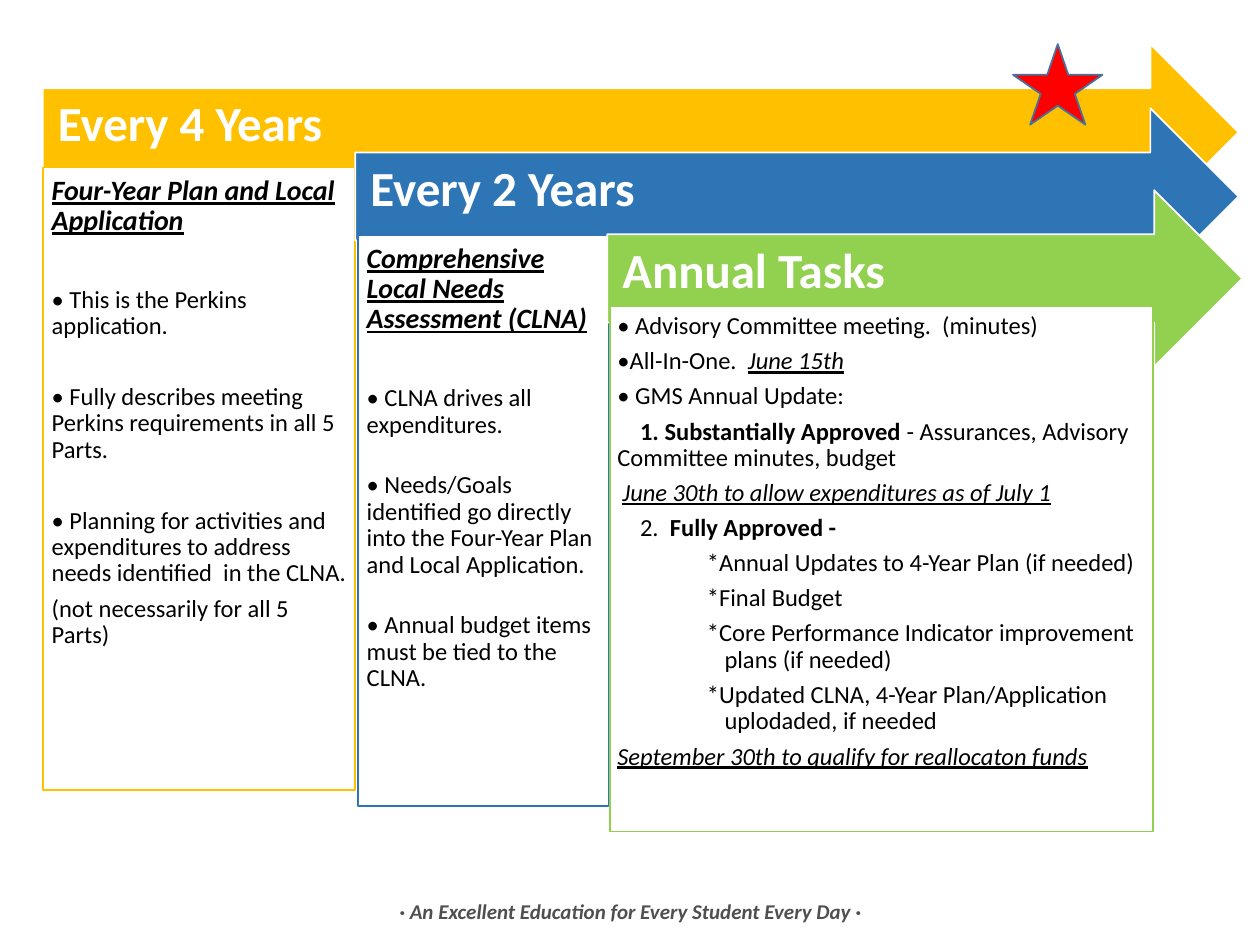
from dataclasses import dataclass

from pptx import Presentation
from pptx.dml.color import RGBColor
from pptx.enum.shapes import MSO_SHAPE
from pptx.enum.text import MSO_ANCHOR, PP_ALIGN
from pptx.util import Inches, Pt

ARROW, BOX, STAR = MSO_SHAPE.RIGHT_ARROW, MSO_SHAPE.RECTANGLE, MSO_SHAPE.STAR_5_POINT
TOP, MIDDLE, BOTTOM = MSO_ANCHOR.TOP, MSO_ANCHOR.MIDDLE, MSO_ANCHOR.BOTTOM
LEFT, CENTER = PP_ALIGN.LEFT, PP_ALIGN.CENTER

WHITE = RGBColor(0xFF, 0xFF, 0xFF)
BLACK = RGBColor(0x00, 0x00, 0x00)
GRAY = RGBColor(0x4F, 0x4F, 0x4F)
GOLD = RGBColor(0xFF, 0xC0, 0x00)
BLUE = RGBColor(0x2E, 0x75, 0xB6)
GREEN = RGBColor(0x92, 0xD0, 0x50)
RED = RGBColor(0xFF, 0x00, 0x00)
STAR_EDGE = RGBColor(0x43, 0x73, 0x9E)

FONT = "Calibri"
BOLD = {"bold": True}
DATE = {"italic": True, "underline": True}
HEADING = {"bold": True, "italic": True, "underline": True}
ARROW_HEIGHT = 1.4
ARROW_MARGINS = (0.12, 0.12, 0.28, 0.22)


@dataclass(frozen=True)
class Run:
    text: str
    style: dict


@dataclass(frozen=True)
class Line:
    """One paragraph: sizes and space in points, indents in inches."""
    runs: tuple[Run, ...]
    size: float = 14
    before: float = 0
    margin: float = 0
    indent: float = 0


@dataclass(frozen=True)
class Stage:
    title: str
    color: RGBColor
    arrow: tuple[float, float, float]  # left, top, width
    box: tuple[float, float, float, float]
    inset: float
    lines: tuple[Line, ...]


def plain(text: str, **layout: float) -> Line:
    return Line((Run(text, {}),), **layout)


def heading(text: str) -> Line:
    return Line((Run(text, HEADING),), size=16)


def subtask(text: str) -> Line:
    return plain(text, margin=0.85, indent=-0.14)


STAGES = (
    Stage("Every 4 Years", GOLD, (0.34, 0.35, 9.49), (0.34, 1.33, 2.48, 4.94), 0.07, (
        heading("Four-Year Plan and Local Application"),
        plain("• This is the Perkins application.", before=23.2),
        plain("• Fully describes meeting Perkins requirements in all 5 Parts.", before=20.3),
        plain("• Planning for activities and expenditures to address needs "
              "identified  in the CLNA.", before=20.3),
        plain("(not necessarily for all 5 Parts)"),
    )),
    Stage("Every 2 Years", BLUE, (2.82, 0.86, 7.01), (2.84, 1.87, 1.99, 4.53), 0.07, (
        heading("Comprehensive Local Needs Assessment (CLNA)"),
        plain("• CLNA drives all expenditures.", before=23.2),
        plain("• Needs/Goals identified go directly into the Four-Year Plan "
              "and Local Application.", before=14.5),
        plain("• Annual budget items must be tied to the CLNA.", before=14.5),
    )),
    Stage("Annual Tasks", GREEN, (4.82, 1.51, 5.04), (4.84, 2.43, 4.31, 4.17), 0.06, (
        plain("• Advisory Committee meeting.  (minutes)"),
        Line((Run("•All-In-One.  ", {}), Run("June 15th", DATE))),
        plain("• GMS Annual Update:"),
        Line((Run("1. Substantially Approved ", BOLD),
              Run("- Assurances, Advisory Committee minutes, budget", {})), indent=0.18),
        Line((Run("June 30th to allow expenditures as of July 1", DATE),), indent=0.04),
        Line((Run("2.  ", {}), Run("Fully Approved -", BOLD)), indent=0.18),
        subtask("*Annual Updates to 4-Year Plan (if needed)"),
        subtask("*Final Budget"),
        subtask("*Core Performance Indicator improvement plans (if needed)"),
        subtask("*Updated CLNA, 4-Year Plan/Application uplodaded, if needed"),
        Line((Run("September 30th to qualify for reallocaton funds", DATE),)),
    )),
)


def add_outlined_shape(slide, kind, bounds: tuple, fill: RGBColor, edge: RGBColor):
    shape = slide.shapes.add_shape(kind, *map(Inches, bounds))
    shape.shadow.inherit = False
    shape.fill.solid()
    shape.fill.fore_color.rgb = fill
    shape.line.color.rgb = edge
    shape.line.width = Pt(1)
    return shape


def write_lines(shape, lines: tuple[Line, ...], color: RGBColor, anchor,
                margins: tuple, align=LEFT) -> None:
    frame = shape.text_frame
    frame.word_wrap = True
    frame.vertical_anchor = anchor
    for side, margin in zip(("left", "top", "right", "bottom"), margins):
        setattr(frame, f"margin_{side}", Inches(margin))
    for index, line in enumerate(lines):
        paragraph = frame.add_paragraph() if index else frame.paragraphs[0]
        properties = paragraph._p.get_or_add_pPr()
        properties.set("marL", str(Inches(line.margin)))
        properties.set("indent", str(Inches(line.indent)))
        layout = {"alignment": align, "line_spacing": 0.9,
                  "space_before": Pt(line.before), "space_after": Pt(0.35 * line.size)}
        for name, value in layout.items():
            setattr(paragraph, name, value)
        for part in line.runs:
            run = paragraph.add_run()
            run.text = part.text
            run.font.color.rgb = color
            for name, value in {"name": FONT, "size": Pt(line.size), **part.style}.items():
                setattr(run.font, name, value)


def add_stage(slide, stage: Stage) -> None:
    arrow = add_outlined_shape(slide, ARROW, (*stage.arrow, ARROW_HEIGHT), stage.color, WHITE)
    title = Line((Run(stage.title, BOLD),), size=28)
    write_lines(arrow, (title,), WHITE, MIDDLE, ARROW_MARGINS)
    box = add_outlined_shape(slide, BOX, stage.box, WHITE, stage.color)
    write_lines(box, stage.lines, BLACK, TOP, (stage.inset,) * 4)


def main() -> None:
    presentation = Presentation()
    presentation.slide_width, presentation.slide_height = Inches(10), Inches(7.5)
    slide = presentation.slides.add_slide(presentation.slide_layouts[6])

    footer = slide.shapes.add_textbox(*map(Inches, (3.04, 6.98, 3.93, 0.4)))
    motto = Run("· An Excellent Education for Every Student Every Day ·",
                {"bold": True, "italic": True})
    write_lines(footer, (Line((motto,), size=12),), GRAY, BOTTOM,
                (0.1, 0.05, 0.1, 0.05), CENTER)

    for stage in STAGES:
        add_stage(slide, stage)
    add_outlined_shape(slide, STAR, (8.04, 0.35, 0.71, 0.64), RED, STAR_EDGE)
    presentation.save("out.pptx")


if __name__ == "__main__":
    main()
